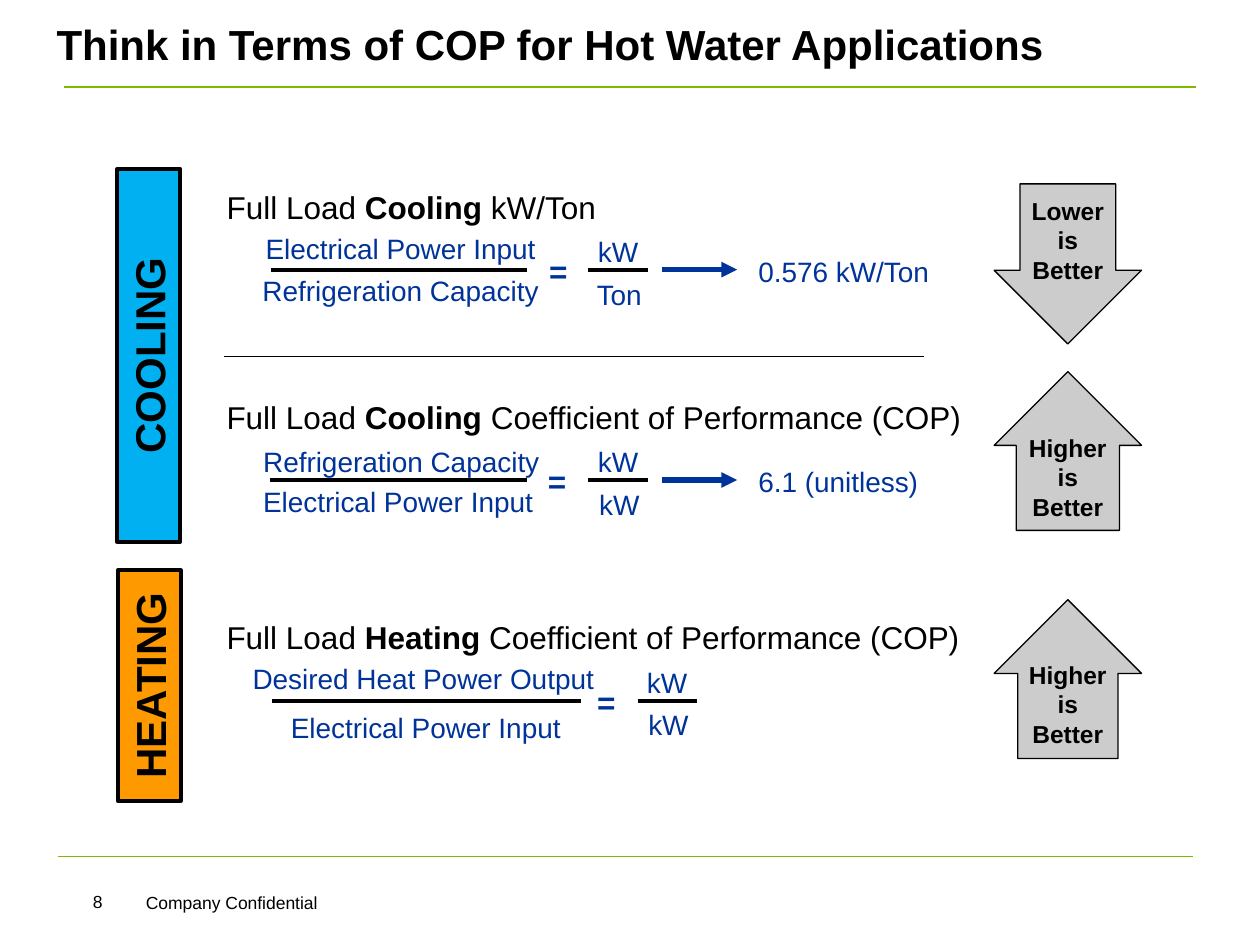
from dataclasses import dataclass

from lxml.etree import SubElement
from pptx import Presentation
from pptx.dml.color import RGBColor
from pptx.enum.shapes import MSO_CONNECTOR, MSO_SHAPE
from pptx.enum.text import MSO_ANCHOR, PP_ALIGN
from pptx.oxml.ns import qn
from pptx.util import Inches, Pt

BLACK = RGBColor(0x00, 0x00, 0x00)
NAVY = RGBColor(0x00, 0x33, 0x99)
GREEN = RGBColor(0x7D, 0xBA, 0x00)
SKY = RGBColor(0x00, 0xB0, 0xF0)
ORANGE = RGBColor(0xFF, 0x99, 0x00)
GRAY = RGBColor(0xCC, 0xCC, 0xCC)

HEADING = {"size": Pt(18)}
TERM = {"size": Pt(16), "color": NAVY}
EQUALS = {"size": Pt(18), "color": NAVY, "bold": True}
TITLE = {"size": Pt(24), "bold": True}
VERDICT = {"size": Pt(14), "bold": True}
FOOTER = {"size": Pt(10)}

TERM_HEIGHT = 0.37
HEADING_HEIGHT = 0.4


@dataclass
class Frame:
    left: float
    top: float
    width: float
    height: float

    def lengths(self) -> list:
        return [Inches(v) for v in (self.left, self.top, self.width, self.height)]


@dataclass
class Term:
    text: str
    left: float
    top: float
    width: float


@dataclass
class Equation:
    mode: str
    measure: str
    heading_width: float
    bar_left: float
    bar_right: float
    bar_y: float
    numerator: Term
    denominator: Term
    equals_left: float
    unit_left: float
    lower_unit: str
    result: str = ""


@dataclass
class Sidebar:
    text: str
    frame: Frame
    fill: RGBColor


@dataclass
class Verdict:
    word: str
    kind: MSO_SHAPE
    top: float
    height: float
    shaft: float


EQUATIONS = [
    Equation("Cooling", " kW/Ton", 3.31, 2.15, 4.18, 2.14,
             Term("Electrical Power Input", 1.92, 1.79, 2.52),
             Term("Refrigeration Capacity", 1.9, 2.12, 2.56),
             4.26, 4.67, "Ton", "0.576 kW/Ton"),
    Equation("Cooling", " Coefficient of Performance (COP)", 6.16, 2.14, 4.18, 3.81,
             Term("Refrigeration Capacity", 1.91, 3.48, 2.55),
             Term("Electrical Power Input", 1.96, 3.8, 2.4),
             4.25, 4.67, "kW", "6.1 (unitless)"),
    Equation("Heating", " Coefficient of Performance (COP)", 6.16, 2.16, 4.61, 5.56,
             Term("Desired Heat Power Output", 1.87, 5.2, 2.98),
             Term("Electrical Power Input", 2.11, 5.59, 2.54),
             4.64, 5.06, "kW"),
]
SIDEBARS = [
    Sidebar("COOLING", Frame(-0.3, 2.57, 2.96, 0.5), SKY),
    Sidebar("HEATING", Frame(0.27, 5.19, 1.83, 0.5), ORANGE),
]
VERDICTS = [
    Verdict("Lower", MSO_SHAPE.DOWN_ARROW, 1.46, 1.27, 0.65),
    Verdict("Higher", MSO_SHAPE.UP_ARROW, 2.95, 1.26, 0.7),
    Verdict("Higher", MSO_SHAPE.UP_ARROW, 4.76, 1.26, 0.68),
]


def add_span(para, text: str, style: dict) -> None:
    span = para.add_run()
    span.text = text
    values = {"name": "Arial", "color": BLACK, "bold": False, **style}
    span.font.color.rgb = values.pop("color")
    for name, value in values.items():
        setattr(span.font, name, value)


def add_text(page, frame: Frame, spans: list[tuple[str, dict]],
             align=PP_ALIGN.LEFT, anchor=MSO_ANCHOR.TOP) -> None:
    box = page.shapes.add_textbox(*frame.lengths())
    box.text_frame.word_wrap = True
    box.text_frame.vertical_anchor = anchor
    para = box.text_frame.paragraphs[0]
    para.alignment = align
    for text, style in spans:
        add_span(para, text, style)


def add_line(page, start: tuple[float, float], end: tuple[float, float],
             color: RGBColor, width: float, arrow: bool = False) -> None:
    line = page.shapes.add_connector(
        MSO_CONNECTOR.STRAIGHT, *[Inches(v) for v in (*start, *end)])
    line.line.color.rgb = color
    line.line.width = Pt(width)
    if arrow:
        SubElement(line.line._get_or_add_ln(), qn("a:tailEnd"), type="triangle")
    SubElement(line._element.spPr, qn("a:effectLst"))


def add_block(page, kind, frame: Frame, fill: RGBColor, line_width: float,
              lines: list[str], style: dict, wrap: bool):
    block = page.shapes.add_shape(kind, *frame.lengths())
    block.shadow.inherit = False
    block.fill.solid()
    block.fill.fore_color.rgb = fill
    block.line.color.rgb = BLACK
    block.line.width = Pt(line_width)
    body = block.text_frame
    body.word_wrap = wrap
    body.vertical_anchor = MSO_ANCHOR.MIDDLE
    for index, text in enumerate(lines):
        para = body.add_paragraph() if index else body.paragraphs[0]
        para.alignment = PP_ALIGN.CENTER
        add_span(para, text, style)
    return block


def add_equation(page, equation: Equation) -> None:
    bar = equation.bar_y
    unit = equation.unit_left
    add_text(page, Frame(1.7, bar - 0.7, equation.heading_width, HEADING_HEIGHT),
             [("Full Load ", HEADING), (equation.mode, {**HEADING, "bold": True}),
              (equation.measure, HEADING)])
    terms = [equation.numerator, equation.denominator,
             Term("kW", unit - 0.08, bar - 0.33, 0.63),
             Term(equation.lower_unit, unit - 0.06, bar + 0.01, 0.61)]
    for term in terms:
        add_text(page, Frame(term.left, term.top, term.width, TERM_HEIGHT),
                 [(term.text, TERM)], PP_ALIGN.CENTER)
    for left, right in ((equation.bar_left, equation.bar_right), (unit, unit + 0.47)):
        add_line(page, (left, bar), (right, bar), BLACK, 2.25)
    add_text(page, Frame(equation.equals_left, bar - 0.19, 0.35, HEADING_HEIGHT),
             [("=", EQUALS)])
    if equation.result:
        add_line(page, (5.25, bar), (5.85, bar), NAVY, 3, arrow=True)
        add_text(page, Frame(5.92, bar - 0.17, 1.59, TERM_HEIGHT),
                 [(equation.result, TERM)])


def add_sidebar(page, sidebar: Sidebar) -> None:
    block = add_block(page, MSO_SHAPE.RECTANGLE, sidebar.frame, sidebar.fill,
                      2.25, [sidebar.text], TITLE, True)
    block.rotation = 270


def add_verdict(page, verdict: Verdict) -> None:
    frame = Frame(7.89, verdict.top, 1.17, verdict.height)
    block = add_block(page, verdict.kind, frame, GRAY, 0.75,
                      [verdict.word, "is", "Better"], VERDICT, False)
    block.adjustments[0] = verdict.shaft
    block.adjustments[1] = 0.5


def main() -> None:
    deck = Presentation()
    deck.slide_width, deck.slide_height = Inches(10), Inches(7.5)
    page = deck.slides.add_slide(deck.slide_layouts[6])
    add_line(page, (0.46, 6.8), (9.47, 6.8), GREEN, 0.75)
    add_line(page, (0.51, 0.69), (9.49, 0.69), GREEN, 0.75)
    add_text(page, Frame(0.35, 0, 9.45, 0.69),
             [("Think in Terms of COP for Hot Water Applications", TITLE)],
             anchor=MSO_ANCHOR.MIDDLE)
    for equation in EQUATIONS:
        add_equation(page, equation)
    add_line(page, (7.33, 2.83), (1.78, 2.83), BLACK, 0.75)
    for sidebar in SIDEBARS:
        add_sidebar(page, sidebar)
    for verdict in VERDICTS:
        add_verdict(page, verdict)
    add_text(page, Frame(0.51, 7.02, 0.53, 0.31), [("8", FOOTER)], PP_ALIGN.CENTER)
    add_text(page, Frame(1.06, 7.03, 3.35, 0.27), [("Company Confidential", FOOTER)])
    deck.save("out.pptx")


if __name__ == "__main__":
    main()
